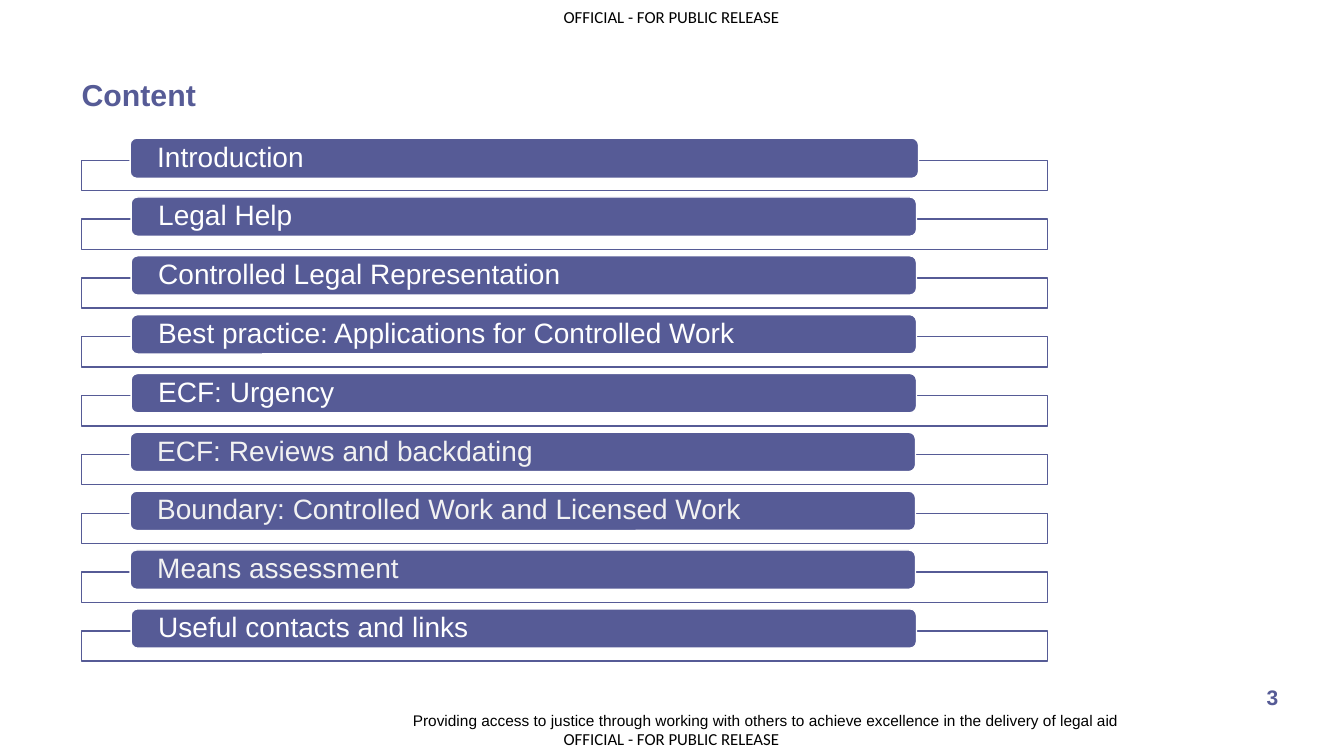
from dataclasses import dataclass

from pptx import Presentation
from pptx.dml.color import RGBColor
from pptx.enum import shapes, text
from pptx.util import Inches, Pt

PURPLE = RGBColor(0x56, 0x5B, 0x96)
WHITE = RGBColor(0xFF, 0xFF, 0xFF)
PALE = RGBColor(0xF2, 0xF2, 0xF2)
BLACK = RGBColor(0, 0, 0)

FIRST_TOP = 1.59
LAST_TOP = 6.26
BAR_RISE = 0.22


@dataclass
class Topic:
    label: str
    color: RGBColor = WHITE
    left: float = 1.3
    width: float = 7.79
    height: float = 0.39


@dataclass
class Label:
    label: str
    left: float
    top: float
    width: float
    height: float
    font: str
    size: float
    color: RGBColor = BLACK
    bold: bool = False
    align: text.PP_ALIGN = text.PP_ALIGN.LEFT
    anchor: text.MSO_ANCHOR = text.MSO_ANCHOR.TOP
    wrap: bool = True


MARKING = "OFFICIAL - FOR PUBLIC RELEASE"
LABELS = [
    Label(MARKING, 5.59, 0.07, 2.18, 0.2, "Calibri", 12, wrap=False),
    Label(MARKING, 5.59, 7.23, 2.18, 0.2, "Calibri", 12, wrap=False),
    Label("3", 12.47, 6.79, 0.3, 0.28, "Arial", 15, PURPLE, True,
          text.PP_ALIGN.CENTER),
    Label("Providing access to justice through working with others to "
          "achieve excellence in the delivery of legal aid",
          3.22, 7.05, 7.88, 0.2, "Arial", 11,
          align=text.PP_ALIGN.RIGHT, anchor=text.MSO_ANCHOR.MIDDLE),
]
TITLE = Label("Content", 0.81, 0.76, 8.44, 0.38, "Arial", 21.6, PURPLE, True)

TOPICS = [
    Topic("Introduction", left=1.29, width=7.82, height=0.4),
    Topic("Legal Help"),
    Topic("Controlled Legal Representation"),
    Topic("Best practice: Applications for Controlled Work"),
    Topic("ECF: Urgency"),
    Topic("ECF: Reviews and backdating", PALE, 1.29),
    Topic("Boundary: Controlled Work and Licensed Work", PALE, 1.29),
    Topic("Means assessment", PALE, 1.29),
    Topic("Useful contacts and links"),
]


def write_label(sp, item: Label) -> None:
    """Place a text shape and format its single paragraph."""
    sp.left, sp.top = Inches(item.left), Inches(item.top)
    sp.width, sp.height = Inches(item.width), Inches(item.height)
    tf = sp.text_frame
    tf.margin_left = tf.margin_top = tf.margin_right = tf.margin_bottom = 0
    tf.auto_size = text.MSO_AUTO_SIZE.NONE
    tf.word_wrap = item.wrap
    tf.vertical_anchor = item.anchor
    tf.text = item.label
    p = tf.paragraphs[0]
    p.alignment = item.align
    format_run(p.runs[0], item.font, item.size, item.color, item.bold)


def format_run(r, font: str, size: float, color: RGBColor,
               bold: bool = False) -> None:
    r.font.name, r.font.size, r.font.bold = font, Pt(size), bold
    r.font.color.rgb = color


def add_box(s, kind, left: float, top: float, width: float, height: float,
            fill: RGBColor, line: RGBColor):
    """Add a filled, outlined shape without a shadow."""
    sp = s.shapes.add_shape(kind, Inches(left), Inches(top),
                            Inches(width), Inches(height))
    sp.shadow.inherit = False
    sp.fill.solid()
    sp.fill.fore_color.rgb = fill
    sp.line.color.rgb = line
    sp.line.width = Pt(1)
    return sp


def add_topic(s, topic: Topic, top: float) -> None:
    """Add a topic: an outlined strip with a rounded bar over its top edge."""
    add_box(s, shapes.MSO_SHAPE.RECTANGLE, 0.81, top, 9.58, 0.3,
            WHITE, PURPLE)
    bar = add_box(s, shapes.MSO_SHAPE.ROUNDED_RECTANGLE, topic.left,
                  top - BAR_RISE, topic.width, topic.height, PURPLE, WHITE)
    tf = bar.text_frame
    tf.margin_left = tf.margin_right = Inches(0.25)
    tf.margin_top = tf.margin_bottom = 0
    tf.vertical_anchor = text.MSO_ANCHOR.MIDDLE
    tf.word_wrap = True
    tf.text = topic.label
    p = tf.paragraphs[0]
    p.alignment = text.PP_ALIGN.LEFT
    p.line_spacing = 0.9
    format_run(p.runs[0], "Arial", 20, topic.color)


def main() -> None:
    prs = Presentation()
    prs.slide_width, prs.slide_height = Inches(13.33), Inches(7.5)
    s = prs.slides.add_slide(prs.slide_layouts[5])

    # Title
    write_label(s.shapes.title, TITLE)

    # Markings, page number and footer
    for item in LABELS:
        write_label(s.shapes.add_textbox(0, 0, 0, 0), item)

    # Topic list, evenly spaced
    pitch = (LAST_TOP - FIRST_TOP) / (len(TOPICS) - 1)
    for i, topic in enumerate(TOPICS):
        add_topic(s, topic, FIRST_TOP + i * pitch)

    prs.save("out.pptx")


if __name__ == "__main__":
    main()
